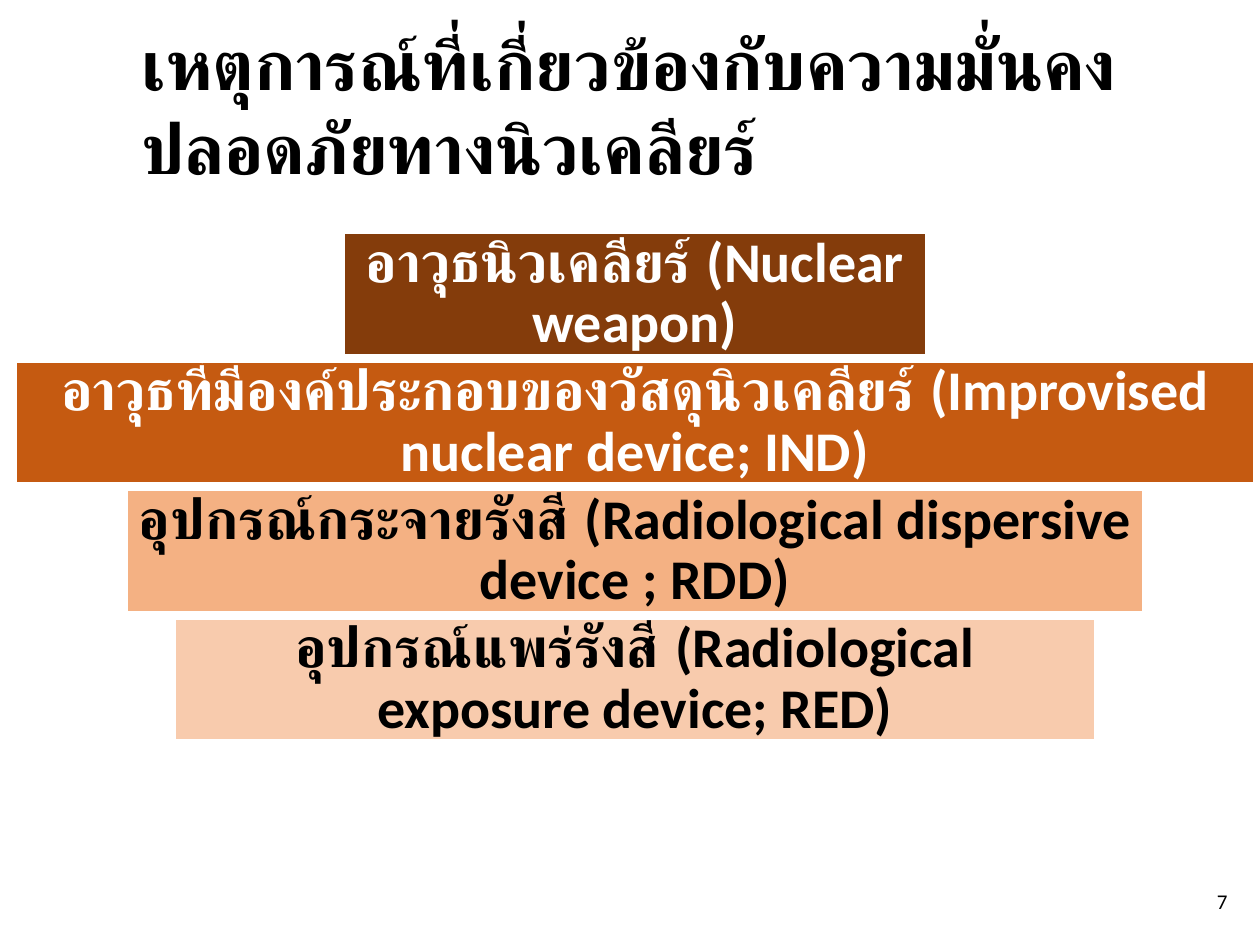
from dataclasses import dataclass

from pptx import Presentation
from pptx.dml.color import RGBColor
from pptx.enum.shapes import MSO_SHAPE
from pptx.enum.text import MSO_ANCHOR, MSO_AUTO_SIZE, PP_ALIGN
from pptx.util import Inches, Pt

RECTANGLE = MSO_SHAPE.RECTANGLE
TOP, MIDDLE = MSO_ANCHOR.TOP, MSO_ANCHOR.MIDDLE
LEFT, CENTER, RIGHT = PP_ALIGN.LEFT, PP_ALIGN.CENTER, PP_ALIGN.RIGHT
GROW = MSO_AUTO_SIZE.SHAPE_TO_FIT_TEXT
TITLE_ONLY = 5


@dataclass(frozen=True)
class Theme:
    font: str = "Calibri"
    title_size: int = 40
    bar_size: int = 32
    number_size: int = 12
    black: str = "000000"
    white: str = "FFFFFF"
    brown: str = "843C0B"
    orange: str = "C55A11"
    apricot: str = "F4B183"
    peach: str = "F8CBAD"


class SlideBuilder:
    def __init__(self, slide, theme):
        self.slide = slide
        self.theme = theme

    def set_text(self, shape, text, size, color, alignment, anchor, bold=False):
        frame = shape.text_frame
        frame.word_wrap = True
        frame.vertical_anchor = anchor
        frame.text = text
        paragraph = frame.paragraphs[0]
        paragraph.alignment = alignment
        paragraph.font.name = self.theme.font
        paragraph.font.size = Pt(size)
        paragraph.font.bold = bold
        paragraph.font.color.rgb = RGBColor.from_string(color)
        return frame

    def title(self, text, left, top, width, height):
        shape = self.slide.shapes.title
        shape.left, shape.top = Inches(left), Inches(top)
        shape.width, shape.height = Inches(width), Inches(height)
        frame = self.set_text(shape, text, self.theme.title_size,
                              self.theme.black, LEFT, TOP, bold=True)
        frame.auto_size = GROW

    def bar(self, text, left, top, width, height, fill, color):
        shape = self.slide.shapes.add_shape(
            RECTANGLE, Inches(left), Inches(top), Inches(width), Inches(height))
        shape.shadow.inherit = False
        shape.fill.solid()
        shape.fill.fore_color.rgb = RGBColor.from_string(fill)
        shape.line.color.rgb = RGBColor.from_string(self.theme.white)
        shape.line.width = Pt(1.5)
        frame = self.set_text(shape, text, self.theme.bar_size, color,
                              CENTER, MIDDLE, bold=True)
        frame.margin_left = frame.margin_right = Inches(0.09)
        frame.margin_top = frame.margin_bottom = Inches(0.09)
        frame.paragraphs[0].line_spacing = 0.9

    def page_number(self, text, left, top, width, height):
        shape = self.slide.shapes.add_textbox(
            Inches(left), Inches(top), Inches(width), Inches(height))
        self.set_text(shape, text, self.theme.number_size, self.theme.black,
                      RIGHT, MIDDLE)


def main():
    theme = Theme()
    presentation = Presentation()
    presentation.slide_width, presentation.slide_height = Inches(10), Inches(7.5)
    slide = presentation.slides.add_slide(presentation.slide_layouts[TITLE_ONLY])
    builder = SlideBuilder(slide, theme)

    builder.page_number("7", 7.59, 6.95, 2.25, 0.4)
    builder.title("เหตุการณ์ที่เกี่ยวข้องกับความมั่นคงปลอดภัยทางนิวเคลียร์",
                  1.02, 0.11, 9.06, 0.77)

    threats = [
        ("อาวุธนิวเคลียร์ (Nuclear weapon)", 4.63, theme.brown, theme.white),
        ("อาวุธที่มีองค์ประกอบของวัสดุนิวเคลียร์ (Improvised nuclear device; IND)",
         9.83, theme.orange, theme.white),
        ("อุปกรณ์กระจายรังสี (Radiological dispersive device ; RDD)",
         8.07, theme.apricot, theme.black),
        ("อุปกรณ์แพร่รังสี (Radiological exposure device; RED)",
         7.31, theme.peach, theme.black),
    ]
    center, first_top, height, gap = 5.04, 1.85, 0.97, 0.05
    for index, (text, width, fill, color) in enumerate(threats):
        top = first_top + index * (height + gap)
        builder.bar(text, center - width / 2, top, width, height, fill, color)

    presentation.save("out.pptx")


if __name__ == "__main__":
    main()
